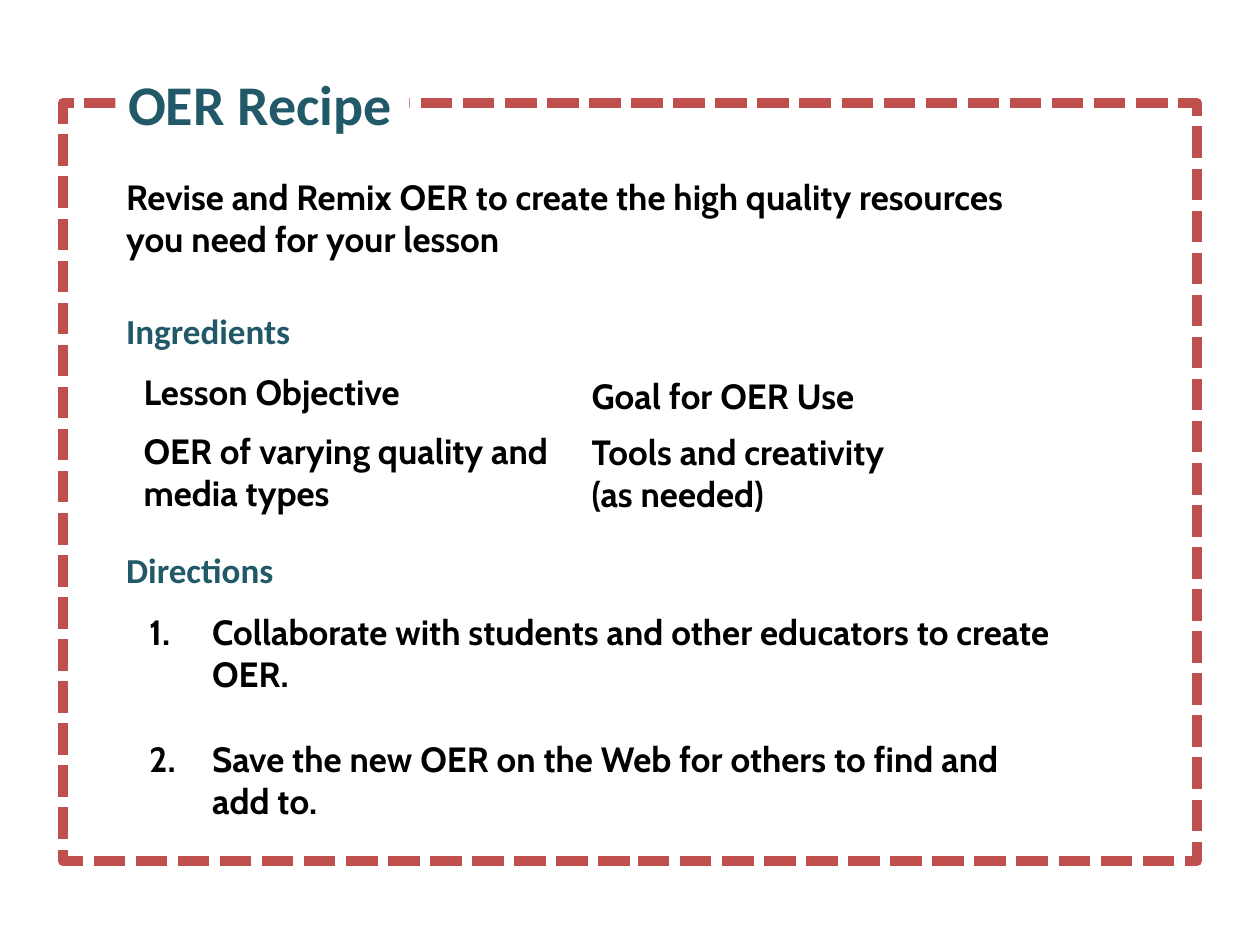
from lxml import etree
from pptx import Presentation
from pptx.dml.color import RGBColor
from pptx.enum import dml, shapes, text
from pptx.oxml.ns import qn
from pptx.util import Pt

TEAL, BLACK, WHITE, RED = "215968", "000000", "FFFFFF", "C0504D"


def paint(color, code):
    color.rgb = RGBColor.from_string(code)


def fill(shape, code):
    shape.fill.solid()
    paint(shape.fill.fore_color, code)


def place(shape, x, y, w, h):
    shape.left, shape.top, shape.width, shape.height = map(Pt, (x, y, w, h))


def write(shape, words, size=20, face="Cabin", code=BLACK):
    frame = shape.text_frame
    frame.text = words
    frame.word_wrap = True
    frame.auto_size = text.MSO_AUTO_SIZE.NONE
    frame.vertical_anchor = text.MSO_ANCHOR.TOP
    for para in frame.paragraphs:
        para.alignment = text.PP_ALIGN.LEFT
        para.space_before = Pt(0)
        for run in para.runs:
            font = run.font
            font.name, font.size, font.bold = face, Pt(size), True
            paint(font.color, code)


def label(slide, words, x, y, w, h, **style):
    box = slide.shapes.add_textbox(Pt(x), Pt(y), Pt(w), Pt(h))
    write(box, words, **style)


def border(slide, x, y, w, h):
    rect = slide.shapes.add_shape(
        shapes.MSO_SHAPE.RECTANGLE, Pt(x), Pt(y), Pt(w), Pt(h))
    rect.shadow.inherit = False
    fill(rect, WHITE)
    paint(rect.line.color, RED)
    rect.line.width = Pt(6)
    rect.line.dash_style = dml.MSO_LINE.SQUARE_DOT
    slide.shapes.title._element.addprevious(rect._element)


def heading(slide, words, x, y, w, h):
    title = slide.shapes.title
    place(title, x, y, w, h)
    fill(title, WHITE)
    write(title, words, size=32, face="Calibri", code=TEAL)


def steps(slide, items, x, y, w, h):
    body = slide.placeholders[1]
    place(body, x, y, w, h)
    write(body, "\n".join(items))
    for i, para in enumerate(body.text_frame.paragraphs):
        para.space_before = Pt(24.3 if i else 0)
        props = para._p.get_or_add_pPr()
        props.set("marL", str(Pt(36)))
        props.set("indent", str(Pt(-36)))
        etree.SubElement(props, qn("a:buFont"), typeface="+mj-lt")
        etree.SubElement(props, qn("a:buAutoNum"), type="arabicPeriod")


def main():
    deck = Presentation()
    deck.slide_width, deck.slide_height = Pt(720), Pt(540)
    slide = deck.slides.add_slide(deck.slide_layouts[1])

    border(slide, 36, 59, 648, 433)
    heading(slide, "OER Recipe", 66, 36, 168, 46)
    label(slide, "Revise and Remix OER to create the high quality resources "
          "you need for your lesson", 65, 97, 534, 56)

    for words, y in (("Ingredients", 173.5), ("Directions", 310)):
        label(slide, words, 65, y, 205, 32, face="Calibri", code=TEAL)

    for words, x, y, w, h in (
        ("Lesson Objective", 75, 208, 237, 32),
        ("Goal for OER Use", 331, 210.5, 237, 32),
        ("OER of varying quality and media types", 75, 242, 288, 56),
        ("Tools and creativity\n(as needed)", 331, 242.5, 216, 56),
    ):
        label(slide, words, x, y, w, h)

    steps(slide, (
        "Collaborate with students and other educators to create OER.",
        "Save the new OER on the Web for others to find and add to.",
    ), 78, 345.5, 534, 128)
    deck.save("out.pptx")


if __name__ == "__main__":
    main()
